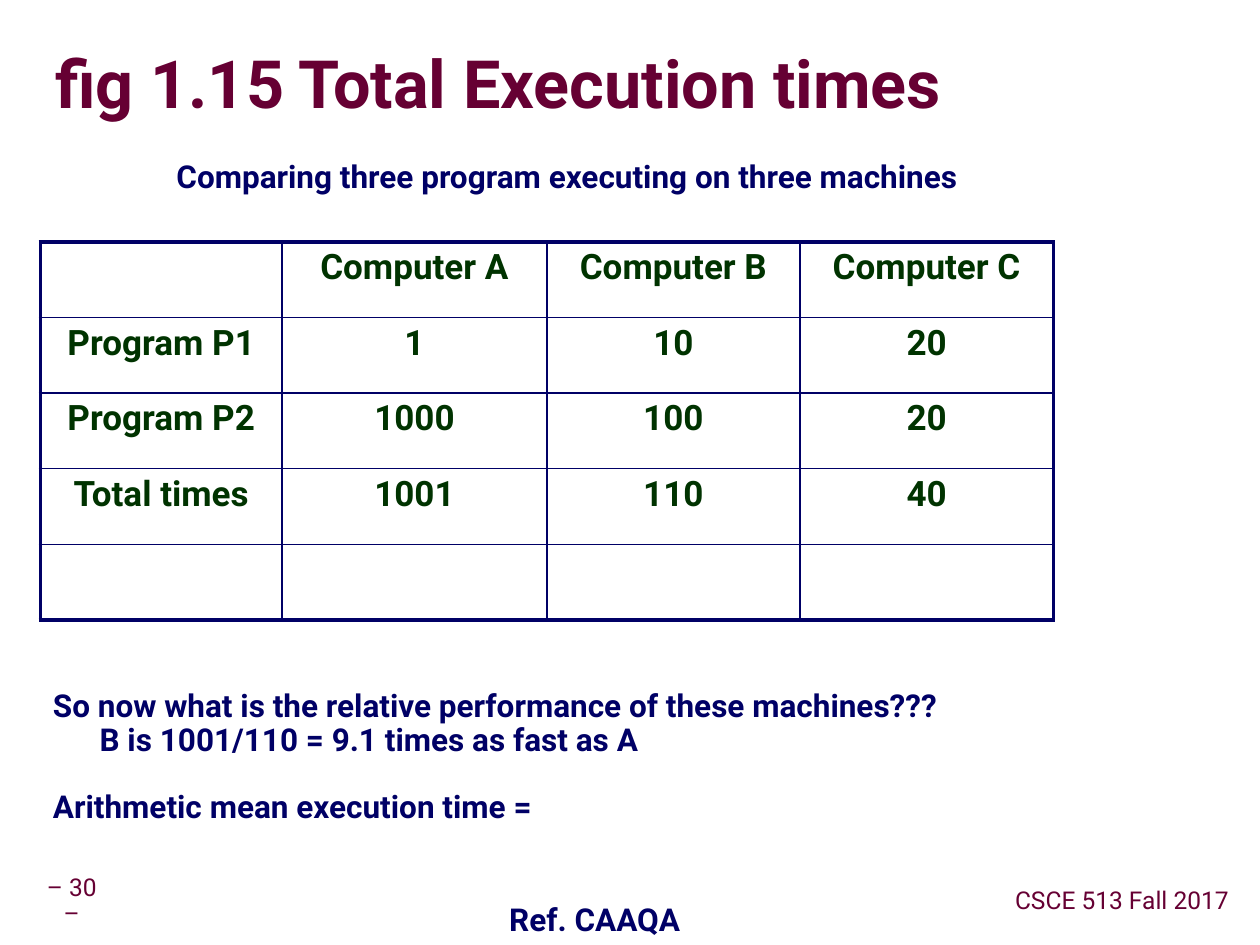
from dataclasses import dataclass
from lxml.etree import SubElement
from pptx import Presentation
from pptx.dml.color import RGBColor
from pptx.enum.text import MSO_ANCHOR as Anchor, MSO_AUTO_SIZE as AutoSize, PP_ALIGN as Align
from pptx.oxml import parse_xml
from pptx.oxml.ns import nsdecls, qn
from pptx.util import Inches, Pt


@dataclass(frozen=True)
class Theme:
    font: str = "Roboto"
    maroon: str = "660033"
    navy: str = "000066"
    green: str = "003300"
    shadow: str = "969696"
    title_size: int = 38
    table_size: int = 20
    body_size: int = 18
    footer_size: int = 14
    outer_border: float = 2.25
    inner_border: float = 1


THEME = Theme()
TITLE = "fig 1.15 Total Execution times"
BODY_STYLE = (THEME.body_size, THEME.navy, True)
FOOTER_STYLE = (THEME.footer_size, THEME.maroon, False)

ROWS = [
    ["", "Computer A", "Computer B", "Computer C"],
    ["Program P1", "1", "10", "20"],
    ["Program P2", "1000", "100", "20"],
    ["Total times", "1001", "110", "40"],
    ["", "", "", ""],
]
COLUMN_WIDTHS = [1.92, 2.1, 2.01, 2.01]
ROW_HEIGHT = 0.6
TABLE_ORIGIN = (0.32, 1.92)

CAPTIONS = [
    ("Comparing three program executing on three machines", (1.15, 1.23, 6.7, 0.37), BODY_STYLE, Anchor.TOP, False),
    ("Ref. CAAQA", (3.88, 7.13, 1.68, 0.37), BODY_STYLE, Anchor.TOP, False),
    ("– 30 –", (0.27, 6.94, 0.6, 0.43), FOOTER_STYLE, Anchor.MIDDLE, True),
    ("CSCE 513 Fall 2017", (7.96, 7, 1.89, 0.31), FOOTER_STYLE, Anchor.MIDDLE, False),
]
DISCUSSION_BOX = (0.37, 5.43, 7.59, 1.2)
DISCUSSION = [
    ("So now what is the relative performance of these machines???", 0, 0),
    ("B is 1001/110 = 9.1 times as fast as A", 0.37, 0),
    ("Arithmetic mean execution time =", 0, 19),
]


def style_paragraph(paragraph, size, color, bold, spacing=0.9, align=Align.CENTER):
    """Apply alignment, line spacing and font to a paragraph."""
    paragraph.alignment = align
    paragraph.line_spacing = spacing
    paragraph.space_before = Pt(0)
    for run in paragraph.runs:
        run.font.name = THEME.font
        run.font.size = Pt(size)
        run.font.bold = bold
        run.font.color.rgb = RGBColor.from_string(color)


def set_margins(target, inset):
    """Give a text frame or cell the same margin on all sides."""
    target.margin_left = target.margin_right = Inches(inset)
    target.margin_top = target.margin_bottom = Inches(inset)


def add_text_box(slide, box, anchor=Anchor.TOP, wrap=False):
    """Add an empty text box and return its text frame."""
    frame = slide.shapes.add_textbox(*map(Inches, box)).text_frame
    frame.word_wrap = wrap
    frame.vertical_anchor = anchor
    frame.auto_size = AutoSize.NONE
    set_margins(frame, 0.05)
    return frame


def add_title(slide):
    """Format the title placeholder with its text shadow."""
    title = slide.shapes.title
    title.left, title.top, title.width, title.height = map(Inches, (0.44, 0.27, 9.53, 0.85))
    frame = title.text_frame
    frame.text = TITLE
    frame.vertical_anchor = Anchor.MIDDLE
    frame.auto_size = AutoSize.NONE
    set_margins(frame, 0)
    paragraph = frame.paragraphs[0]
    style_paragraph(paragraph, THEME.title_size, THEME.maroon, True, 0.87, Align.LEFT)
    properties = paragraph.runs[0].font._element
    effects = parse_xml(
        f'<a:effectLst {nsdecls("a")}><a:outerShdw dist="38100" dir="2700000">'
        f'<a:srgbClr val="{THEME.shadow}"/></a:outerShdw></a:effectLst>'
    )
    properties.find(qn("a:solidFill")).addnext(effects)


def set_borders(cell, outer_sides):
    """Draw the four cell borders, heavier on the table's outside."""
    properties = cell._tc.get_or_add_tcPr()
    for index, (side, is_outer) in enumerate(zip("LRTB", outer_sides)):
        width = THEME.outer_border if is_outer else THEME.inner_border
        line = properties.makeelement(qn(f"a:ln{side}"), {"w": str(Pt(width))})
        fill = SubElement(line, qn("a:solidFill"))
        SubElement(fill, qn("a:srgbClr"), val=THEME.navy)
        properties.insert(index, line)


def add_times_table(slide):
    """Add the table of execution times."""
    row_count, column_count = len(ROWS), len(COLUMN_WIDTHS)
    size = (sum(COLUMN_WIDTHS), ROW_HEIGHT * row_count)
    table = slide.shapes.add_table(row_count, column_count, *map(Inches, TABLE_ORIGIN + size)).table
    table.first_row = table.horz_banding = False
    for column, width in zip(table.columns, COLUMN_WIDTHS):
        column.width = Inches(width)
    for row_index, values in enumerate(ROWS):
        table.rows[row_index].height = Inches(ROW_HEIGHT)
        for column_index, value in enumerate(values):
            cell = table.cell(row_index, column_index)
            cell.text = value
            cell.fill.background()
            set_margins(cell, 0.05)
            style_paragraph(cell.text_frame.paragraphs[0], THEME.table_size, THEME.green, True, 0.95)
            set_borders(cell, (column_index == 0, column_index == column_count - 1,
                               row_index == 0, row_index == row_count - 1))


def add_discussion(slide):
    """Add the question and answers below the table."""
    frame = add_text_box(slide, DISCUSSION_BOX)
    for index, (text, indent, gap) in enumerate(DISCUSSION):
        paragraph = frame.add_paragraph() if index else frame.paragraphs[0]
        paragraph.text = text
        style_paragraph(paragraph, *BODY_STYLE, align=Align.LEFT)
        paragraph.space_before = Pt(gap)
        paragraph._p.get_or_add_pPr().set("marL", str(Inches(indent)))


def main():
    """Build and save the slide."""
    presentation = Presentation()
    presentation.slide_width, presentation.slide_height = Inches(10), Inches(7.5)
    slide = presentation.slides.add_slide(presentation.slide_layouts[5])
    add_title(slide)
    add_times_table(slide)
    for text, box, style, anchor, wrap in CAPTIONS:
        frame = add_text_box(slide, box, anchor, wrap)
        frame.text = text
        style_paragraph(frame.paragraphs[0], *style)
    add_discussion(slide)
    presentation.save("out.pptx")


if __name__ == "__main__":
    main()
